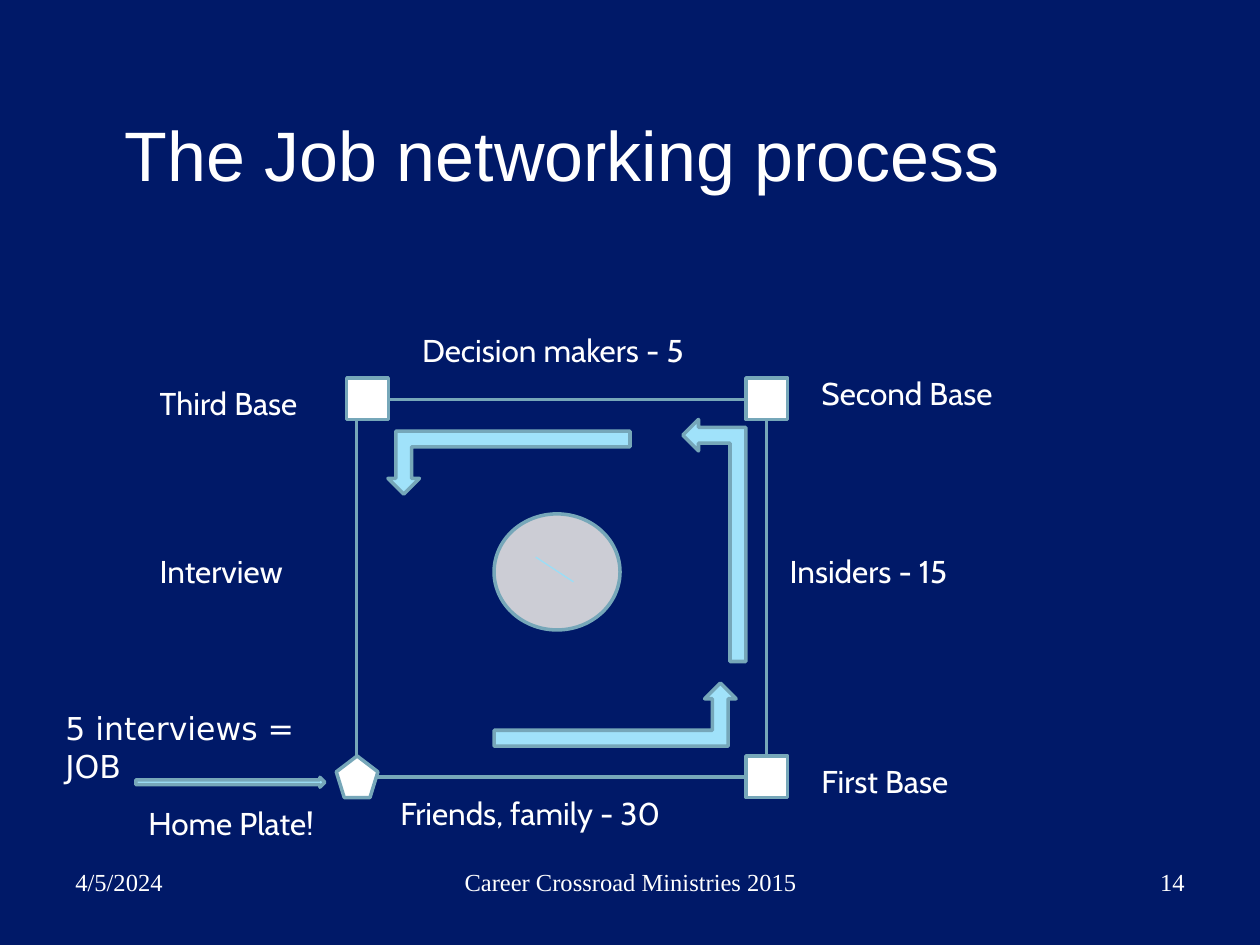
from pptx import Presentation
from pptx.dml.color import RGBColor
from pptx.enum.shapes import MSO_CONNECTOR as Link, MSO_SHAPE as Form
from pptx.enum.text import MSO_ANCHOR as Anchor, PP_ALIGN as Align
from pptx.oxml.ns import qn
from pptx.util import Cm, Pt
from lxml.etree import SubElement

NAVY = RGBColor(0x00, 0x19, 0x68)
WHITE = RGBColor(0xFF, 0xFF, 0xFF)
EDGE = RGBColor(0x76, 0xA7, 0xB9)
SKY = RGBColor(0xA0, 0xE2, 0xFA)
PALE = RGBColor(0x9A, 0xDE, 0xF7)
GREY = RGBColor(0xCC, 0xCD, 0xD5)

# Content: lengths in cm
TITLE = "The Job networking process"
LABELS = [  # text, left, top, width
    ("Friends, family - 30", 7.82, 15.88, 6.78),
    ("Insiders - 15", 15.67, 11, 4.45),
    ("Decision makers - 5", 8.26, 6.55, 6.55),
    ("Interview", 2.97, 11, 3.61),
    ("First Base", 16.31, 15.24, 4.88),
    ("Second Base", 16.31, 7.42, 4.65),
    ("Third Base", 2.97, 7.62, 3.61),
    ("Home Plate!", 2.74, 16.08, 4.24),
]
GOAL = "5 interviews = JOB"
FOOTER = [  # text, left, width, alignment
    ("4/5/2024", 1.27, 5.92, Align.LEFT),
    ("Career Crossroad Ministries 2015", 8.69, 8.05, Align.CENTER),
    ("14", 18.21, 5.92, Align.RIGHT),
]
BASE = 0.84
BASES = [  # form, left, top
    (Form.RECTANGLE, 15.04, 15.24),
    (Form.RECTANGLE, 15.04, 7.62),
    (Form.RECTANGLE, 6.99, 7.62),
    (Form.REGULAR_PENTAGON, 6.78, 15.24),
]
TURNS = [(9.96, 13.77, 0), (7.82, 8.69, 180), (11.96, 10.26, 270)]  # left, top, angle

deck = Presentation()
deck.slide_width, deck.slide_height = Cm(25.4), Cm(19.05)
slide = deck.slides.add_slide(deck.slide_layouts[6])
slide.background.fill.solid()
slide.background.fill.fore_color.rgb = NAVY


def add_text(text, left, top, width, height=1.02, size=18, font="Cabin",
             align=Align.LEFT, anchor=Anchor.TOP):
    box = slide.shapes.add_textbox(Cm(left), Cm(top), Cm(width), Cm(height))
    frame = box.text_frame
    frame.word_wrap = True
    frame.vertical_anchor = anchor
    para = frame.paragraphs[0]
    para.alignment = align
    run = para.add_run()
    run.text = text
    run.font.size, run.font.name = Pt(size), font
    run.font.color.rgb = WHITE


def add_form(form, left, top, width, height, fill=None, angle=0):
    shape = slide.shapes.add_shape(form, Cm(left), Cm(top), Cm(width), Cm(height))
    shape.shadow.inherit = False
    shape.rotation = angle
    if fill is None:
        shape.fill.background()
    else:
        shape.fill.solid()
        shape.fill.fore_color.rgb = fill
    shape.line.color.rgb = EDGE
    shape.line.width = Pt(2)


# Title
add_text(TITLE, 1.27, 0.89, 20.12, height=3.18, size=40, font="Arial",
         align=Align.CENTER, anchor=Anchor.BOTTOM)

# Infield and bases
add_form(Form.RECTANGLE, 7.19, 8.05, 8.26, 7.62)
for form, left, top in BASES:
    add_form(form, left, top, BASE, BASE, WHITE)

# Mound with its short line
add_form(Form.OVAL, 9.96, 10.36, 2.54, 2.34, GREY)
line = slide.shapes.add_connector(Link.STRAIGHT, Cm(10.8), Cm(11.23), Cm(11.56), Cm(11.73))
line.line.color.rgb = PALE
line.line.width = Pt(0.75)
SubElement(line._element.spPr, qn("a:effectLst"))

# Arrows round the bases
add_form(Form.RIGHT_ARROW, 2.74, 15.67, 3.81, 0.2, SKY)
for left, top, angle in TURNS:
    add_form(Form.BENT_UP_ARROW, left, top, 4.88, 1.27, SKY, angle)

# Labels
for label in LABELS:
    add_text(*label)
add_text(GOAL, 1.07, 14.17, 5.92, font="DejaVu Sans")

# Footer
for text, left, width, align in FOOTER:
    add_text(text, left, 17.35, width, height=1.32, size=14,
             font="Times New Roman", align=align)

deck.save("out.pptx")
